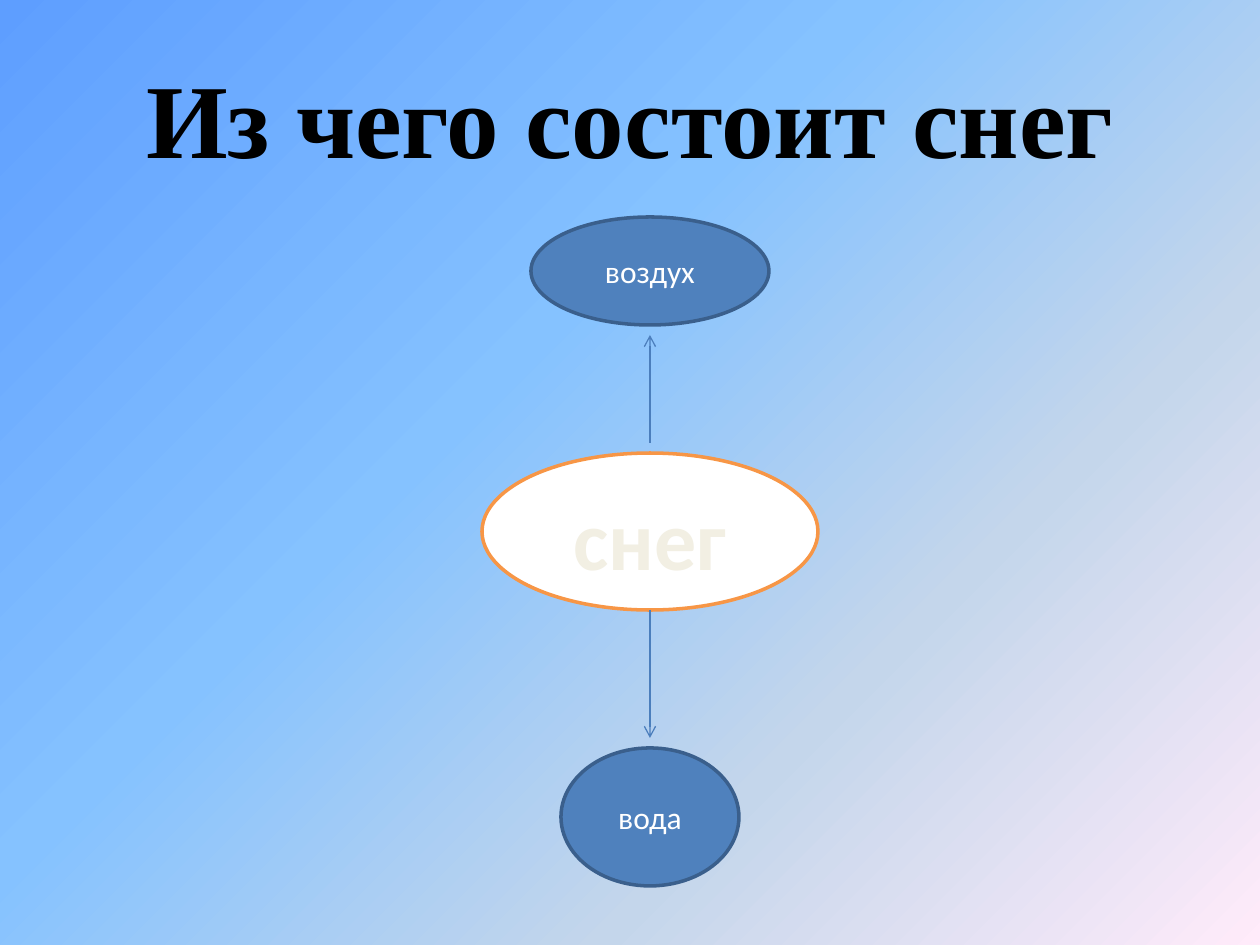
import dataclasses

import lxml.etree
import pptx
import pptx.dml.color
import pptx.enum.shapes
import pptx.enum.text
import pptx.oxml.ns
import pptx.util

PX = pptx.util.Inches(1) // 126


@dataclasses.dataclass(frozen=True)
class Theme:
    title_font: str = "Times New Roman"
    body_font: str = "Calibri"
    title_size: int = 60
    snow_size: int = 48
    part_size: int = 18
    black: str = "000000"
    white: str = "FFFFFF"
    cream: str = "F2EFE3"
    orange: str = "F79646"
    blue: str = "4F81BD"
    dark_blue: str = "3A5F8C"
    arrow_blue: str = "4B7EBC"
    gradient: tuple = ((0, "5E9EFF"), (40, "85C2FF"), (70, "C4D6EB"), (100, "FFEBFA"))


theme = Theme()
rgb = pptx.dml.color.RGBColor.from_string
qn = pptx.oxml.ns.qn


def write_text(shape, text, font_name, size, color, bold=False):
    frame = shape.text_frame
    frame.text = text
    frame.word_wrap = True
    frame.vertical_anchor = pptx.enum.text.MSO_ANCHOR.MIDDLE
    paragraph = frame.paragraphs[0]
    paragraph.alignment = pptx.enum.text.PP_ALIGN.CENTER
    font = paragraph.runs[0].font
    font.name = font_name
    font.size = pptx.util.Pt(size)
    font.bold = bold
    font.color.rgb = rgb(color)


def add_ellipse(center_x, top, width, height, fill, line):
    ellipse = slide.shapes.add_shape(
        pptx.enum.shapes.MSO_SHAPE.OVAL,
        (center_x - width // 2) * PX, top * PX, width * PX, height * PX)
    ellipse.shadow.inherit = False
    ellipse.fill.solid()
    ellipse.fill.fore_color.rgb = rgb(fill)
    ellipse.line.color.rgb = rgb(line)
    ellipse.line.width = pptx.util.Pt(2)
    return ellipse


presentation = pptx.Presentation()
presentation.slide_width = 1260 * PX
presentation.slide_height = 945 * PX
slide = presentation.slides.add_slide(presentation.slide_layouts[5])

# Diagonal background with four stops
background = slide.background.fill
background.gradient()
background.gradient_angle = 315
stop_list = slide.background._cSld.find(".//" + qn("a:gsLst"))
for stop in list(stop_list):
    stop_list.remove(stop)
for percent, color in theme.gradient:
    stop = lxml.etree.SubElement(stop_list, qn("a:gs"), pos=str(percent * 1000))
    lxml.etree.SubElement(stop, qn("a:srgbClr"), val=color)

title = slide.shapes.title
title.left, title.top, title.width, title.height = 63 * PX, 38 * PX, 1134 * PX, 157 * PX
write_text(title, "Из чего состоит снег", theme.title_font, theme.title_size,
           theme.black, bold=True)

# Snow in the middle, its parts above and below
axis_x = 650
add_ellipse(axis_x, 453, 336, 157, theme.white, theme.orange)
snow_label = slide.shapes.add_textbox((axis_x - 140) * PX, 482 * PX, 280 * PX, 110 * PX)
write_text(snow_label, "снег", theme.body_font, theme.snow_size, theme.cream, bold=True)

for start_y, end_y in ((443, 335), (610, 738)):
    arrow = slide.shapes.add_connector(
        pptx.enum.shapes.MSO_CONNECTOR.STRAIGHT,
        axis_x * PX, start_y * PX, axis_x * PX, end_y * PX)
    arrow.line.color.rgb = rgb(theme.arrow_blue)
    arrow.line.width = pptx.util.Pt(0.75)
    lxml.etree.SubElement(arrow.line._get_or_add_ln(), qn("a:tailEnd"), type="arrow")
    lxml.etree.SubElement(arrow._element.spPr, qn("a:effectLst"))

for text, top, width, height in (("воздух", 217, 238, 108), ("вода", 748, 178, 138)):
    part = add_ellipse(axis_x, top, width, height, theme.blue, theme.dark_blue)
    write_text(part, text, theme.body_font, theme.part_size, theme.white)

presentation.save("out.pptx")
